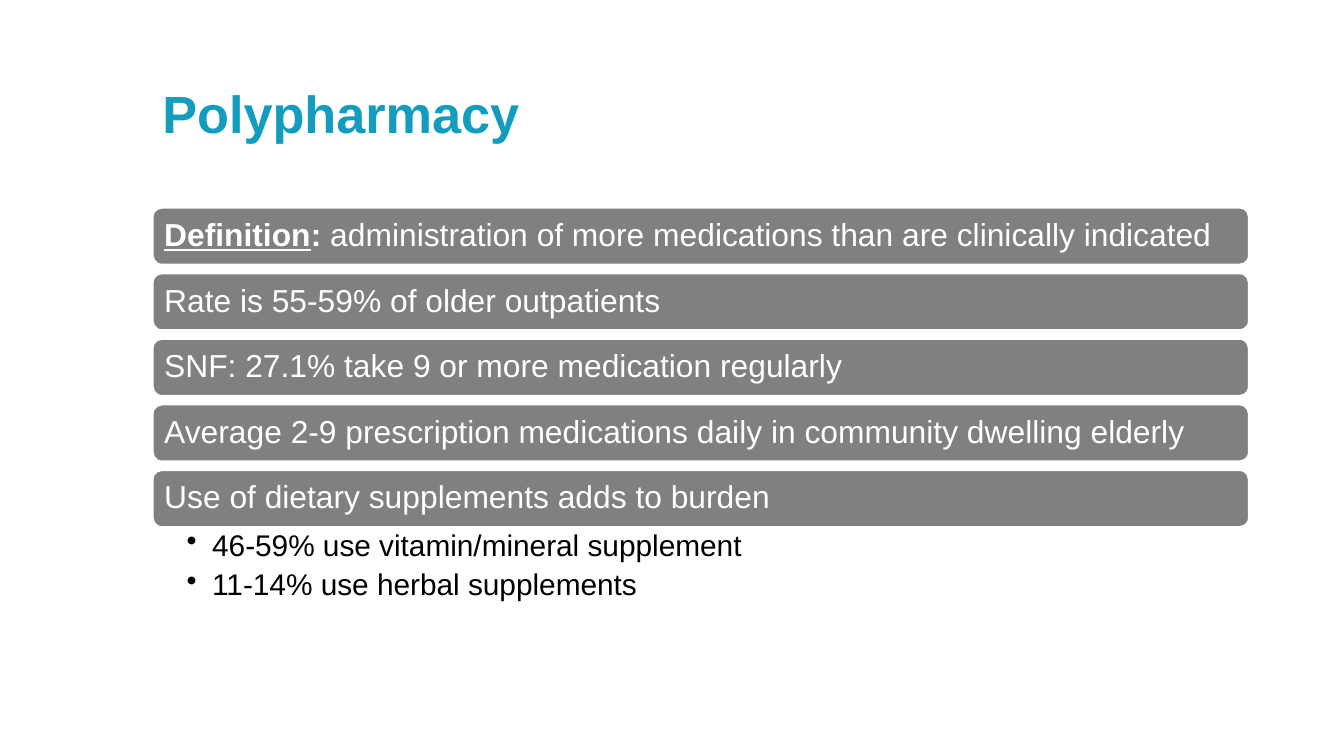
"""Build the polypharmacy slide: a title, five fact bars and two bullets."""
from lxml.etree import SubElement
from pptx import Presentation
from pptx.dml.color import RGBColor
from pptx.enum.shapes import MSO_SHAPE
from pptx.enum.text import MSO_ANCHOR, MSO_AUTO_SIZE, PP_ALIGN
from pptx.oxml.ns import qn
from pptx.util import Cm, Pt

COLORS = {"title": "129DBF", "bar": "808080", "light": "FFFFFF", "dark": "000000"}
FACTS = [
    [("Definition", {"bold": True, "underline": True}),
     (": ", {"bold": True}),
     ("administration of more medications than are clinically indicated", {})],
    [("Rate is 55-59% of older outpatients", {})],
    [("SNF: 27.1% take 9 or more medication regularly", {})],
    [("Average 2-9 prescription medications daily in community dwelling elderly", {})],
    [("Use of dietary supplements adds to burden", {})],
]
SUPPLEMENTS = ["46-59% use vitamin/mineral supplement", "11-14% use herbal supplements"]
LEFT, WIDTH = Cm(2.87), Cm(20.75)
FIRST_TOP, BAR_HEIGHT, BAR_PITCH = Cm(3.91), Cm(1.11), Cm(1.24)


def rgb(name):
    """Return the named colour."""
    return RGBColor.from_string(COLORS[name])


def apply(target, values):
    """Set every attribute listed in values on the target."""
    for name, value in values.items():
        setattr(target, name, value)


def set_frame(frame, insets, anchor):
    """Set wrapping, anchor and the left, top, right and bottom insets in cm."""
    sides = ("margin_left", "margin_top", "margin_right", "margin_bottom")
    apply(frame, dict(zip(sides, map(Cm, insets))))
    apply(frame, {"word_wrap": True, "auto_size": MSO_AUTO_SIZE.NONE,
                  "vertical_anchor": anchor})


def write(paragraph, pieces, size, color):
    """Fill a left-aligned paragraph with formatted runs."""
    apply(paragraph, {"alignment": PP_ALIGN.LEFT, "line_spacing": 0.9})
    for text, extras in pieces:
        run = paragraph.add_run()
        run.text = text
        apply(run.font, {"name": "Arial", "size": Pt(size), "bold": False, **extras})
        run.font.color.rgb = rgb(color)


def add_title(slide, text):
    """Place and format the slide title."""
    title = slide.shapes.title
    apply(title, {"left": Cm(2.82), "top": Cm(0.91),
                  "width": Cm(22.58), "height": Cm(2.57)})
    set_frame(title.text_frame, (0.25, 0, 0.25, 0), MSO_ANCHOR.MIDDLE)
    write(title.text_frame.paragraphs[0], [(text, {"bold": True})], 28, "title")


def add_fact_bar(slide, top, pieces):
    """Add one rounded bar holding a fact."""
    bar = slide.shapes.add_shape(MSO_SHAPE.ROUNDED_RECTANGLE, LEFT, top, WIDTH, BAR_HEIGHT)
    bar.shadow.inherit = False
    bar.fill.solid()
    bar.fill.fore_color.rgb = rgb("bar")
    bar.line.color.rgb = rgb("light")
    bar.line.width = Pt(2)
    set_frame(bar.text_frame, (0.18, 0.18, 0.18, 0.18), MSO_ANCHOR.MIDDLE)
    write(bar.text_frame.paragraphs[0], pieces, 17, "light")


def add_bullets(slide, top, lines):
    """Add the bulleted details below the last bar."""
    details = slide.shapes.add_textbox(LEFT, top, WIDTH, Cm(2.9)).text_frame
    set_frame(details, (0.66, 0.05, 0.3, 0.05), MSO_ANCHOR.TOP)
    for index, line in enumerate(lines):
        paragraph = details.add_paragraph() if index else details.paragraphs[0]
        apply(paragraph, {"level": 1, "space_after": Pt(3.8)})
        properties = paragraph._p.get_or_add_pPr()
        properties.set("marL", str(Cm(0.48)))
        properties.set("indent", str(-Cm(0.48)))
        write(paragraph, [(line, {})], 16, "dark")
        SubElement(properties, qn("a:buChar"), char="•")


def main():
    """Create and save the presentation."""
    presentation = Presentation()
    apply(presentation, {"slide_width": Cm(25.4), "slide_height": Cm(14.29)})
    slide = presentation.slides.add_slide(presentation.slide_layouts[5])
    add_title(slide, "Polypharmacy")
    for index, pieces in enumerate(FACTS):
        add_fact_bar(slide, FIRST_TOP + index * BAR_PITCH, pieces)
    last_top = FIRST_TOP + (len(FACTS) - 1) * BAR_PITCH
    add_bullets(slide, last_top + BAR_HEIGHT, SUPPLEMENTS)
    presentation.save("out.pptx")


if __name__ == "__main__":
    main()
